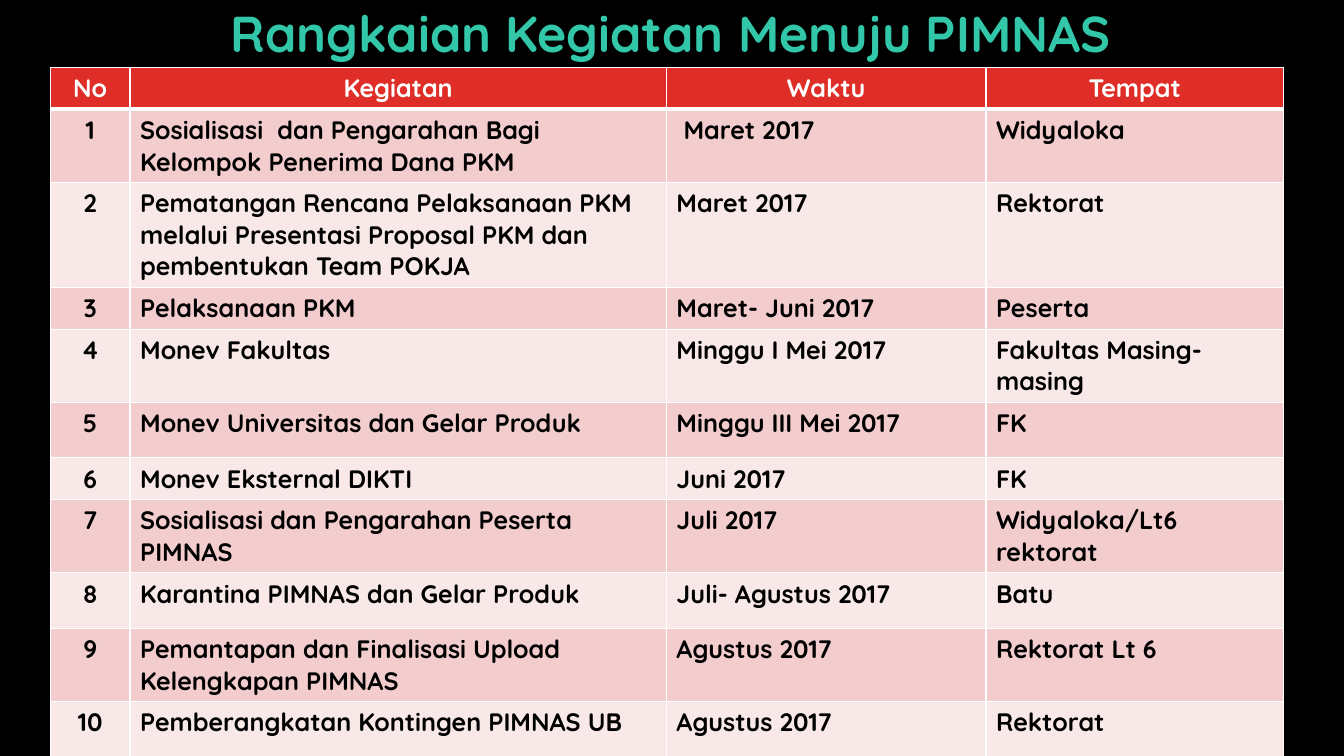
from lxml.etree import SubElement
from pptx import Presentation
from pptx.dml.color import RGBColor
from pptx.enum.text import MSO_ANCHOR, MSO_AUTO_SIZE, PP_ALIGN
from pptx.oxml import parse_xml
from pptx.oxml.ns import nsdecls, qn
from pptx.util import Inches, Pt

TITLE = "Rangkaian Kegiatan Menuju PIMNAS"
HEADER = ("No", "Kegiatan", "Waktu", "Tempat")
# Activity, time, place; the number follows from the order
ACTIVITIES = [
    ("Sosialisasi  dan Pengarahan Bagi Kelompok Penerima Dana PKM", " Maret 2017", "Widyaloka"),
    ("Pematangan Rencana Pelaksanaan PKM melalui Presentasi Proposal PKM dan "
     "pembentukan Team POKJA", "Maret 2017", "Rektorat"),
    ("Pelaksanaan PKM", "Maret- Juni 2017", "Peserta"),
    ("Monev Fakultas", "Minggu I Mei 2017", "Fakultas Masing-masing"),
    ("Monev Universitas dan Gelar Produk", "Minggu III Mei 2017", "FK"),
    ("Monev Eksternal DIKTI", "Juni 2017", "FK"),
    ("Sosialisasi dan Pengarahan Peserta PIMNAS", "Juli 2017", "Widyaloka/Lt6 rektorat"),
    ("Karantina PIMNAS dan Gelar Produk", "Juli- Agustus 2017", "Batu"),
    ("Pemantapan dan Finalisasi Upload Kelengkapan PIMNAS", "Agustus 2017", "Rektorat Lt 6"),
    ("Pemberangkatan Kontingen PIMNAS UB", "Agustus 2017", "Rektorat"),
]
COLUMN_WIDTHS = (0.79, 5.32, 3.17, 2.95)
ROW_HEIGHTS = (0.38, 0.66, 1.02, 0.38, 0.66, 0.55, 0.38, 0.66, 0.55, 0.66, 0.55)

FONT = "Quicksand"
BLACK, WHITE, TEAL, RED = "000000", "FFFFFF", "32C7A9", "DF2E28"
BANDS = ("F9E8E8", "F3CDCD")


def color(value):
    return RGBColor.from_string(value)


def add_text(para, text, size, ink, align):
    para.alignment = align
    span = para.add_run()
    span.text = text
    span.font.name, span.font.size, span.font.bold = FONT, Pt(size), True
    span.font.color.rgb = color(ink)
    return span


def make_line(tag, ink, points):
    line = parse_xml(f'<a:{tag} {nsdecls("a")} w="{Pt(points)}"/>')
    fill = SubElement(line, qn("a:solidFill"))
    SubElement(fill, qn("a:srgbClr"), val=ink)
    return line


def set_borders(cell, top, bottom):
    widths = {"lnL": 1, "lnR": 1, "lnT": top, "lnB": bottom}
    properties = cell._tc.get_or_add_tcPr()
    for place, (tag, points) in enumerate(widths.items()):
        properties.insert(place, make_line(tag, WHITE, points))


deck = Presentation()
deck.slide_width, deck.slide_height = Inches(13.33), Inches(7.5)
page = deck.slides.add_slide(deck.slide_layouts[5])
page.background.fill.solid()
page.background.fill.fore_color.rgb = color(BLACK)

# Title
title = page.shapes.title
title.left, title.top, title.width, title.height = map(Inches, (1.94, 0.04, 9.42, 1.06))
frame = title.text_frame
frame.word_wrap, frame.auto_size = True, MSO_AUTO_SIZE.NONE
frame.vertical_anchor = MSO_ANCHOR.TOP
para = frame.paragraphs[0]
para.line_spacing = 0.9
span = add_text(para, TITLE, 36, TEAL, PP_ALIGN.CENTER)
span.font._element.insert(0, make_line("ln", BLACK, 0.75))

# Schedule table
rows = [HEADER] + [(str(number), *row) for number, row in enumerate(ACTIVITIES, 1)]
table = page.shapes.add_table(
    len(rows), len(HEADER), Inches(0.5), Inches(0.67),
    Inches(sum(COLUMN_WIDTHS)), Inches(sum(ROW_HEIGHTS))).table
for column, width in zip(table.columns, COLUMN_WIDTHS):
    column.width = Inches(width)
for r, (row, height) in enumerate(zip(rows, ROW_HEIGHTS)):
    table.rows[r].height = Inches(height)
    for c, text in enumerate(row):
        cell = table.cell(r, c)
        cell.fill.solid()
        cell.fill.fore_color.rgb = color(BANDS[r % 2] if r else RED)
        centred = r == 0 or c == 0
        add_text(cell.text_frame.paragraphs[0], text, 18, BLACK if r else WHITE,
                 PP_ALIGN.CENTER if centred else PP_ALIGN.LEFT)
        # A thick rule parts the header from the first activity
        set_borders(cell, top=3 if r == 1 else 1, bottom=3 if r == 0 else 1)

deck.save("out.pptx")
